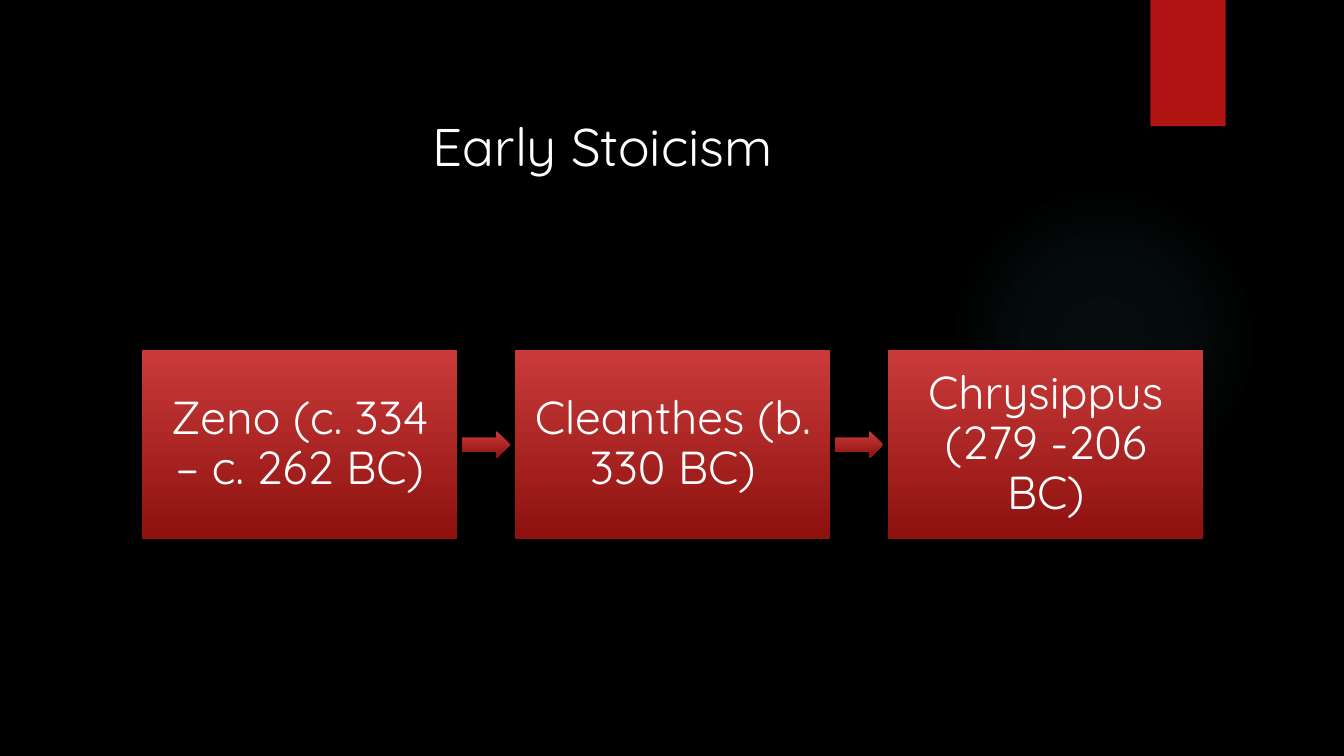
from typing import NamedTuple

from lxml import etree
from pptx import Presentation
from pptx import util as u
from pptx.dml.color import RGBColor
from pptx.enum import shapes, text
from pptx.oxml import ns

COLORS = {
    "background": "000000",
    "text": "FFFFFF",
    "accent": "B01513",
    "light_red": "C93B3A",
    "dark_red": "8D110F",
    "glow": "50B9C1",
    "shadow": "000000",
}
FONT = "Quicksand"


class Frame(NamedTuple):
    """Position and size in centimetres."""
    left: float
    top: float
    width: float
    height: float


class Stop(NamedTuple):
    """Gradient stop: position and opacity in percent."""
    position: int
    color: str
    opacity: int = 100


PHILOSOPHERS = [
    "Zeno (c. 334 – c. 262 BC)",
    "Cleanthes (b. 330 BC)",
    "Chrysippus (279 -206 BC)",
]
FIRST_BOX = Frame(3.58, 8.82, 7.95, 4.77)
BOX_PITCH = 9.4
ARROW_WIDTH, ARROW_HEIGHT = 1.2, 0.69
RED_STOPS = [Stop(0, "light_red"), Stop(100, "dark_red")]
GLOW_STOPS = [Stop(0, "glow", 7), Stop(36, "glow", 6), Stop(69, "glow", 0)]
DOWNWARD = '<a:lin ang="5400000" scaled="0"/>'
FROM_CENTER = ('<a:path path="circle">'
               '<a:fillToRect l="50000" t="50000" r="50000" b="50000"/></a:path>')


def rgb(name: str) -> RGBColor:
    return RGBColor.from_string(COLORS[name])


def add_shape(slide, kind, frame: Frame):
    shape = slide.shapes.add_shape(kind, *(u.Cm(value) for value in frame))
    shape.shadow.inherit = False
    shape.line.fill.background()
    return shape


def set_gradient(shape, stops: list[Stop], direction: str) -> None:
    shape.fill.background()
    stop_xml = "".join(
        f'<a:gs pos="{stop.position * 1000}"><a:srgbClr val="{COLORS[stop.color]}">'
        f'<a:alpha val="{stop.opacity * 1000}"/></a:srgbClr></a:gs>'
        for stop in stops)
    gradient = etree.fromstring(
        f'<a:gradFill {ns.nsdecls("a")} rotWithShape="1">'
        f'<a:gsLst>{stop_xml}</a:gsLst>{direction}</a:gradFill>')
    properties = shape.element.spPr
    properties.replace(properties.find(ns.qn("a:noFill")), gradient)


def add_shadow(shape) -> None:
    effects = shape.element.spPr.find(ns.qn("a:effectLst"))
    effects.append(etree.fromstring(
        f'<a:outerShdw {ns.nsdecls("a")} blurRad="{u.Pt(3)}" dist="{u.Pt(2)}" '
        f'dir="5400000" rotWithShape="0"><a:srgbClr val="{COLORS["shadow"]}">'
        '<a:alpha val="45000"/></a:srgbClr></a:outerShdw>'))


def set_text(shape, words: str, size: float):
    frame = shape.text_frame
    frame.word_wrap = True
    frame.auto_size = text.MSO_AUTO_SIZE.NONE
    frame.vertical_anchor = text.MSO_ANCHOR.MIDDLE
    para = frame.paragraphs[0]
    para.text = words
    para.alignment = text.PP_ALIGN.CENTER
    para.font.name = FONT
    para.font.size = u.Pt(size)
    para.font.color.rgb = rgb("text")
    return frame


def add_philosopher(slide, frame: Frame, words: str) -> None:
    box = add_shape(slide, shapes.MSO_SHAPE.RECTANGLE, frame)
    set_gradient(box, RED_STOPS, DOWNWARD)
    add_shadow(box)
    body = set_text(box, words, 33)
    body.paragraphs[0].line_spacing = 0.9
    body.margin_left = body.margin_right = u.Cm(0.44)
    body.margin_top = body.margin_bottom = u.Cm(0.44)


def add_arrow(slide, frame: Frame) -> None:
    arrow = add_shape(slide, shapes.MSO_SHAPE.RIGHT_ARROW, frame)
    set_gradient(arrow, RED_STOPS, DOWNWARD)
    add_shadow(arrow)


def main() -> None:
    deck = Presentation()
    deck.slide_width, deck.slide_height = u.Cm(33.87), u.Cm(19.05)
    page = deck.slides.add_slide(deck.slide_layouts[5])
    page.background.fill.solid()
    page.background.fill.fore_color.rgb = rgb("background")

    # Soft glow and corner ribbon
    glow = add_shape(page, shapes.MSO_SHAPE.OVAL, Frame(23.9, 4.65, 7.82, 7.82))
    set_gradient(glow, GLOW_STOPS, FROM_CENTER)
    ribbon = add_shape(page, shapes.MSO_SHAPE.RECTANGLE, Frame(28.99, 0, 1.9, 3.18))
    ribbon.fill.solid()
    ribbon.fill.fore_color.rgb = rgb("accent")
    add_shadow(ribbon)

    # Title
    title = page.shapes.title
    title.left, title.top = u.Cm(3.2), u.Cm(2.69)
    title.width, title.height = u.Cm(24.33), u.Cm(1.96)
    set_text(title, "Early Stoicism", 37.8).margin_right = u.Cm(0.6)

    # Succession of philosophers, with an arrow centred in each gap
    gap = BOX_PITCH - FIRST_BOX.width
    for index, words in enumerate(PHILOSOPHERS):
        box = FIRST_BOX._replace(left=FIRST_BOX.left + index * BOX_PITCH)
        add_philosopher(page, box, words)
        if index < len(PHILOSOPHERS) - 1:
            add_arrow(page, Frame(box.left + box.width + (gap - ARROW_WIDTH) / 2,
                                  box.top + (box.height - ARROW_HEIGHT) / 2,
                                  ARROW_WIDTH, ARROW_HEIGHT))

    deck.save("out.pptx")


if __name__ == "__main__":
    main()
